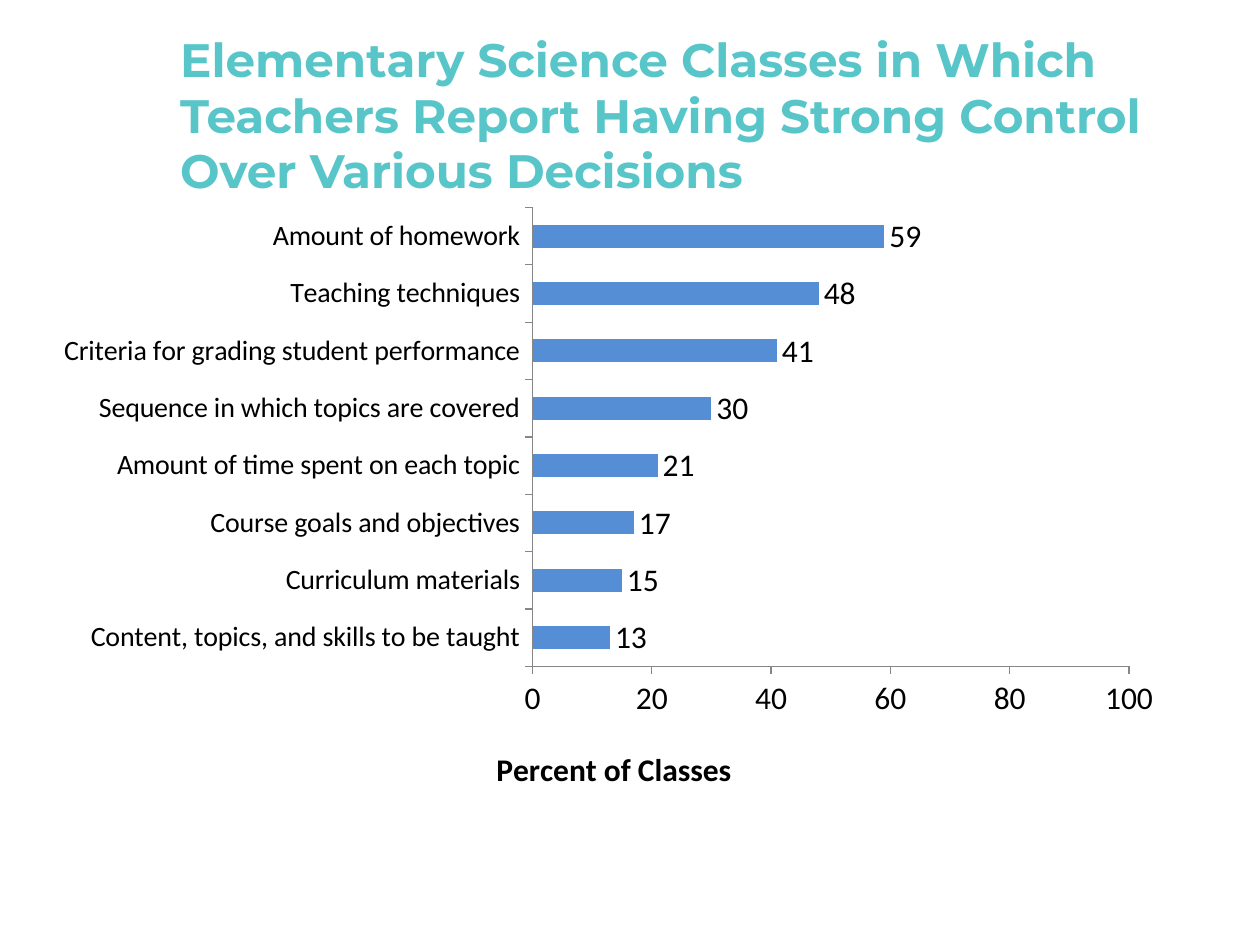
from lxml import etree
from pptx import Presentation
from pptx.chart.data import CategoryChartData
from pptx.dml.color import RGBColor
from pptx.enum.chart import XL_CHART_TYPE, XL_LABEL_POSITION, XL_TICK_MARK
from pptx.enum.text import MSO_ANCHOR, MSO_AUTO_SIZE, PP_ALIGN
from pptx.oxml.ns import qn
from pptx.util import Inches, Pt

COLORS = {"title": "58C5C9", "bar": "558ED5", "text": "000000", "axis": "868686"}
TITLE = ("Elementary Science Classes in Which Teachers Report "
         "Having Strong Control Over Various Decisions")
CONTROL = {
    "Content, topics, and skills to be taught": 13,
    "Curriculum materials": 15,
    "Course goals and objectives": 17,
    "Amount of time spent on each topic": 21,
    "Sequence in which topics are covered": 30,
    "Criteria for grading student performance": 41,
    "Teaching techniques": 48,
    "Amount of homework": 59,
}


def apply_format(target, values):
    for name, value in values.items():
        setattr(target, name, value)


def format_font(font, color, **values):
    apply_format(font, values)
    font.color.rgb = RGBColor.from_string(COLORS[color])


def set_layout(parent, **shares):
    """Place a chart part by shares of the chart's size."""
    layout = parent.find(qn("c:layout"))
    if layout is None:
        layout = etree.Element(qn("c:layout"))
        text = parent.find(qn("c:tx"))
        if text is None:
            parent.insert(0, layout)
        else:
            text.addnext(layout)
    for child in list(layout):
        layout.remove(child)
    manual = etree.SubElement(layout, qn("c:manualLayout"))
    if "w" in shares:
        etree.SubElement(manual, qn("c:layoutTarget"), val="inner")
    for side in ("x", "y"):
        etree.SubElement(manual, qn(f"c:{side}Mode"), val="edge")
    for side, share in shares.items():
        etree.SubElement(manual, qn(f"c:{side}"), val=str(share))


def add_title(slide):
    title = slide.shapes.title
    apply_format(title, {"left": Inches(1.33), "top": Inches(0.3),
                         "width": Inches(8.17), "height": Inches(1.25)})
    frame = title.text_frame
    frame.text = TITLE
    apply_format(frame, {"word_wrap": True, "auto_size": MSO_AUTO_SIZE.NONE,
                         "vertical_anchor": MSO_ANCHOR.MIDDLE})
    paragraph = frame.paragraphs[0]
    apply_format(paragraph, {"alignment": PP_ALIGN.LEFT, "line_spacing": 0.98})
    format_font(paragraph.runs[0].font, "title",
                name="Montserrat", size=Pt(26.8), bold=True)


def format_axis(axis, size):
    apply_format(axis, {"has_major_gridlines": False,
                        "major_tick_mark": XL_TICK_MARK.OUTSIDE,
                        "minor_tick_mark": XL_TICK_MARK.NONE})
    axis.format.line.color.rgb = RGBColor.from_string(COLORS["axis"])
    axis.format.line.width = Pt(0.75)
    format_font(axis.tick_labels.font, "text", name="Calibri", size=Pt(size))


def add_bar_chart(slide):
    data = CategoryChartData()
    data.categories = list(CONTROL)
    data.add_series("Series 1", list(CONTROL.values()))
    chart = slide.shapes.add_chart(
        XL_CHART_TYPE.BAR_CLUSTERED, Inches(0.33), Inches(1.55),
        Inches(9), Inches(4.87), data).chart
    apply_format(chart, {"has_legend": False, "has_title": False})
    format_font(chart.font, "text", name="Calibri", size=Pt(18))

    # Axes
    format_axis(chart.category_axis, 16)
    value_axis = chart.value_axis
    format_axis(value_axis, 18)
    apply_format(value_axis, {"minimum_scale": 0, "maximum_scale": 100,
                              "major_unit": 20})
    axis_title = value_axis.axis_title
    axis_title.text_frame.text = "Percent of Classes"
    format_font(axis_title.text_frame.paragraphs[0].runs[0].font, "text",
                name="Calibri", size=Pt(18), bold=True)

    # Bars and their values
    plot = chart.plots[0]
    apply_format(plot, {"gap_width": 150, "vary_by_categories": False,
                        "has_data_labels": True})
    fill = plot.series[0].format.fill
    fill.solid()
    fill.fore_color.rgb = RGBColor.from_string(COLORS["bar"])
    apply_format(plot.data_labels, {"show_value": True,
                                    "position": XL_LABEL_POSITION.OUTSIDE_END})
    format_font(plot.data_labels.font, "text", name="Calibri", size=Pt(18))

    # Positions inside the chart
    plot_area = chart.element.find(f".//{qn('c:plotArea')}")
    set_layout(plot_area, x=0.433, y=0.02, w=0.526, h=0.748)
    set_layout(plot_area.find(f".//{qn('c:valAx')}/{qn('c:title')}"), x=0.396, y=0.89)


def main():
    presentation = Presentation()
    apply_format(presentation, {"slide_width": Inches(10),
                                "slide_height": Inches(7.5)})
    slide = presentation.slides.add_slide(presentation.slide_layouts[5])
    add_bar_chart(slide)
    add_title(slide)
    presentation.save("out.pptx")


if __name__ == "__main__":
    main()
